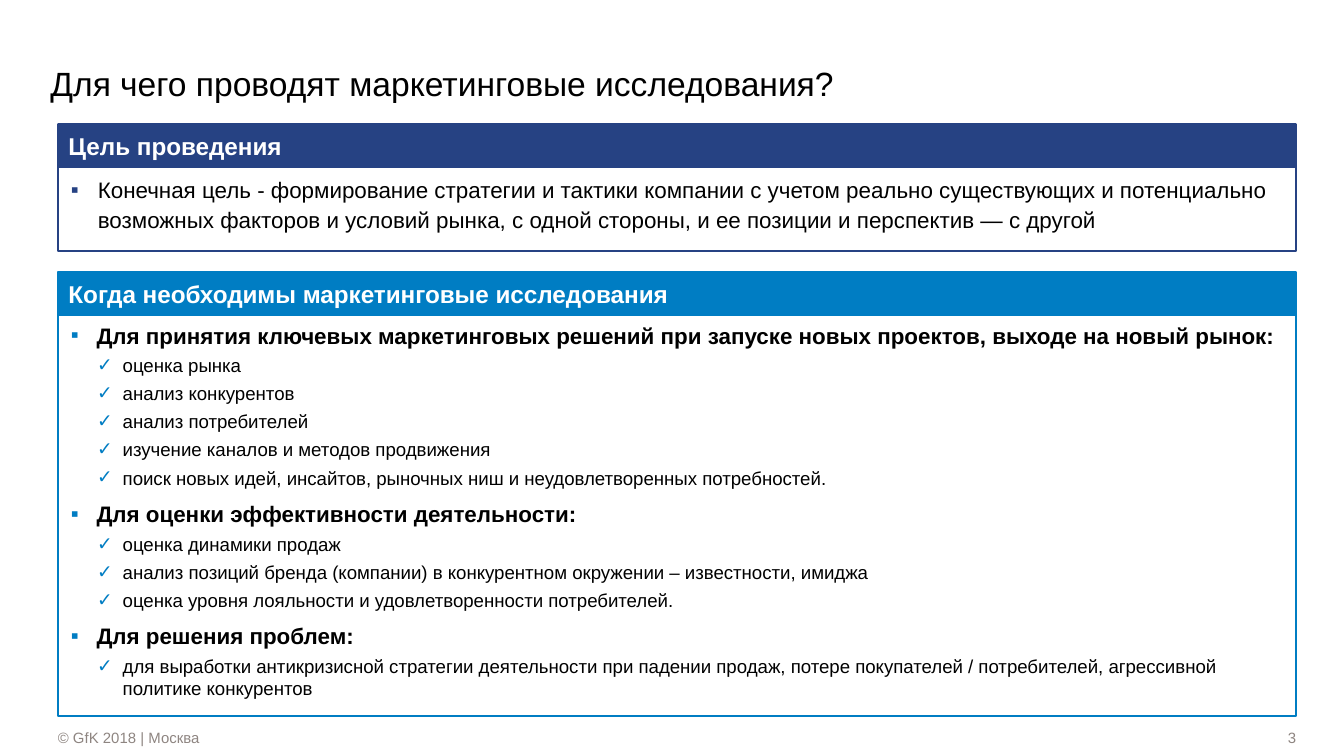
from dataclasses import dataclass
from typing import NamedTuple

from lxml.etree import SubElement
from pptx import Presentation
from pptx.dml.color import RGBColor as Color
from pptx.enum.shapes import MSO_SHAPE as ShapeKind
from pptx.enum.text import MSO_ANCHOR as Anchor, PP_ALIGN as Align
from pptx.oxml.ns import qn
from pptx.util import Emu, Pt

PX = 4572
SLIDE_WIDTH, SLIDE_HEIGHT = 2000, 1125


@dataclass(frozen=True)
class Theme:
    font: str = "Arial"
    white: str = "FFFFFF"
    black: str = "000000"
    gray: str = "8E8581"
    navy: str = "264283"
    blue: str = "007DC3"
    title_size: int = 18
    header_size: int = 13
    point_size: int = 12
    check_size: int = 10
    footer_size: int = 8
    border: float = 1.25


THEME = Theme()


class Area(NamedTuple):
    left: int
    top: int
    width: int
    height: int


@dataclass(frozen=True)
class Line:
    text: str
    size: int
    color: str = THEME.black
    bold: bool = False
    align: Align = Align.LEFT
    bullet: str = ""
    margin: int = 0
    hanging: int = 0
    before: int = 0
    after: int = 0
    spacing: float = 1.0


@dataclass(frozen=True)
class Panel:
    heading: str
    color: str
    top: int
    body_height: int
    lines: list[Line]


def topic(text: str) -> Line:
    return Line(text, THEME.point_size, bold=True, bullet="▪",
                margin=38, hanging=38, before=6)


def check(text: str) -> Line:
    return Line(text, THEME.check_size, bullet="✓",
                margin=77, hanging=38, before=3)


LEFT, WIDTH, HEADER_HEIGHT = 86, 1843, 64
FOOTER_TOP, FOOTER_HEIGHT = 1082, 32

PANELS = [
    Panel("Цель проведения", THEME.navy, 185, 125, [
        Line("Конечная цель - формирование стратегии и тактики компании с учетом "
             "реально существующих и потенциально возможных факторов и условий рынка, "
             "с одной стороны, и ее позиции и перспектив — с другой",
             THEME.point_size, bullet="▪", margin=40, hanging=40,
             after=6, spacing=1.1),
    ]),
    Panel("Когда необходимы маркетинговые исследования", THEME.blue, 405, 597, [
        topic("Для принятия ключевых маркетинговых решений при запуске новых "
              "проектов, выходе на новый рынок:"),
        check("оценка рынка"),
        check("анализ конкурентов"),
        check("анализ потребителей"),
        check("изучение каналов и методов продвижения"),
        check("поиск новых идей, инсайтов, рыночных ниш и неудовлетворенных "
              "потребностей."),
        topic("Для оценки эффективности деятельности:"),
        check("оценка динамики продаж"),
        check("анализ позиций бренда (компании) в конкурентном окружении – "
              "известности, имиджа"),
        check("оценка уровня лояльности и удовлетворенности потребителей."),
        topic("Для решения проблем:"),
        check("для выработки антикризисной стратегии деятельности при падении "
              "продаж, потере покупателей / потребителей, агрессивной политике "
              "конкурентов"),
    ]),
]


def add_bullet(para, line: Line, color: str) -> None:
    props = para._p.get_or_add_pPr()
    props.set("marL", str(line.margin * PX))
    props.set("indent", str(-line.hanging * PX))
    tint = SubElement(props, qn("a:buClr"))
    SubElement(tint, qn("a:srgbClr"), val=color)
    SubElement(props, qn("a:buFont"), typeface=THEME.font)
    SubElement(props, qn("a:buChar"), char=line.bullet)


def write(box, lines: list[Line], anchor: Anchor,
          inset: tuple[int, int] = (0, 0), bullet_color: str = THEME.black) -> None:
    frame = box.text_frame
    frame.word_wrap = True
    frame.vertical_anchor = anchor
    frame.margin_left = frame.margin_right = Emu(inset[0] * PX)
    frame.margin_top = frame.margin_bottom = Emu(inset[1] * PX)
    for index, line in enumerate(lines):
        para = frame.add_paragraph() if index else frame.paragraphs[0]
        para.text = line.text
        para.alignment = line.align
        para.line_spacing = line.spacing
        para.space_before = Pt(line.before if index else 0)
        para.space_after = Pt(line.after)
        if line.bullet:
            add_bullet(para, line, bullet_color)
        para.font.name = THEME.font
        para.font.size = Pt(line.size)
        para.font.bold = line.bold
        para.font.color.rgb = Color.from_string(line.color)


def add_text(page, area: Area, line: Line, anchor: Anchor) -> None:
    box = page.shapes.add_textbox(*(Emu(side * PX) for side in area))
    write(box, [line], anchor)


def add_box(page, area: Area, fill: str, border: str):
    box = page.shapes.add_shape(ShapeKind.RECTANGLE, *(Emu(side * PX) for side in area))
    box.shadow.inherit = False
    box.fill.solid()
    box.fill.fore_color.rgb = Color.from_string(fill)
    box.line.color.rgb = Color.from_string(border)
    box.line.width = Pt(THEME.border)
    return box


def add_panel(page, panel: Panel) -> None:
    body = add_box(page, Area(LEFT, panel.top + HEADER_HEIGHT, WIDTH, panel.body_height),
                   THEME.white, panel.color)
    write(body, panel.lines, Anchor.TOP, (20, 10), panel.color)
    header = add_box(page, Area(LEFT, panel.top, WIDTH, HEADER_HEIGHT),
                     panel.color, panel.color)
    heading = Line(panel.heading, THEME.header_size, THEME.white, bold=True)
    write(header, [heading], Anchor.MIDDLE, (16, 8))


def main() -> None:
    deck = Presentation()
    deck.slide_width = Emu(SLIDE_WIDTH * PX)
    deck.slide_height = Emu(SLIDE_HEIGHT * PX)
    page = deck.slides.add_slide(deck.slide_layouts[6])
    add_text(page, Area(1646, FOOTER_TOP, 283, FOOTER_HEIGHT),
             Line("3", THEME.footer_size, THEME.gray, align=Align.RIGHT), Anchor.MIDDLE)
    add_text(page, Area(LEFT, FOOTER_TOP, 1544, FOOTER_HEIGHT),
             Line("© GfK 2018 | Москва", THEME.footer_size, THEME.gray), Anchor.MIDDLE)
    add_text(page, Area(75, 28, 1402, 126),
             Line("Для чего проводят маркетинговые исследования?", THEME.title_size),
             Anchor.BOTTOM)
    for panel in PANELS:
        add_panel(page, panel)
    deck.save("out.pptx")


if __name__ == "__main__":
    main()
